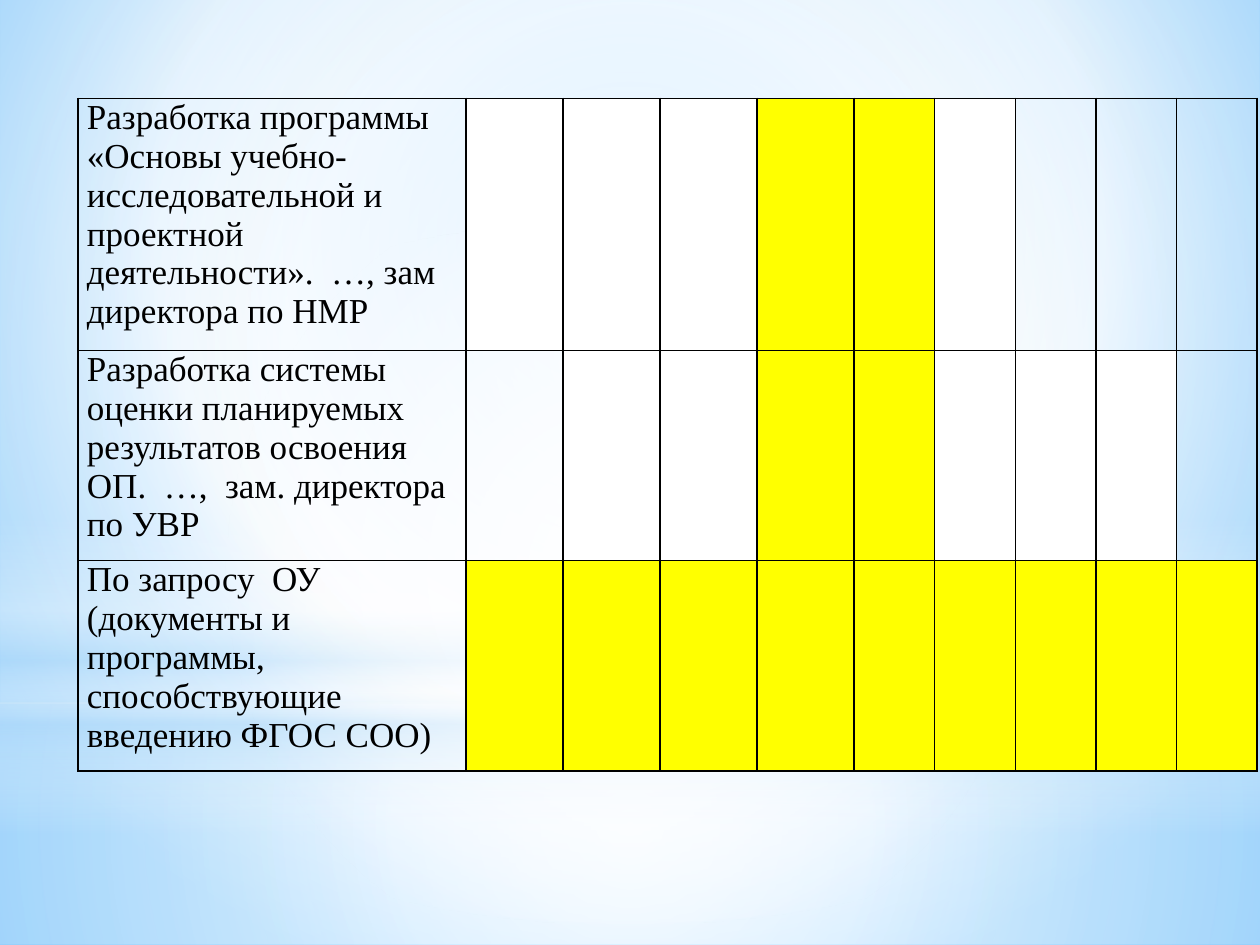
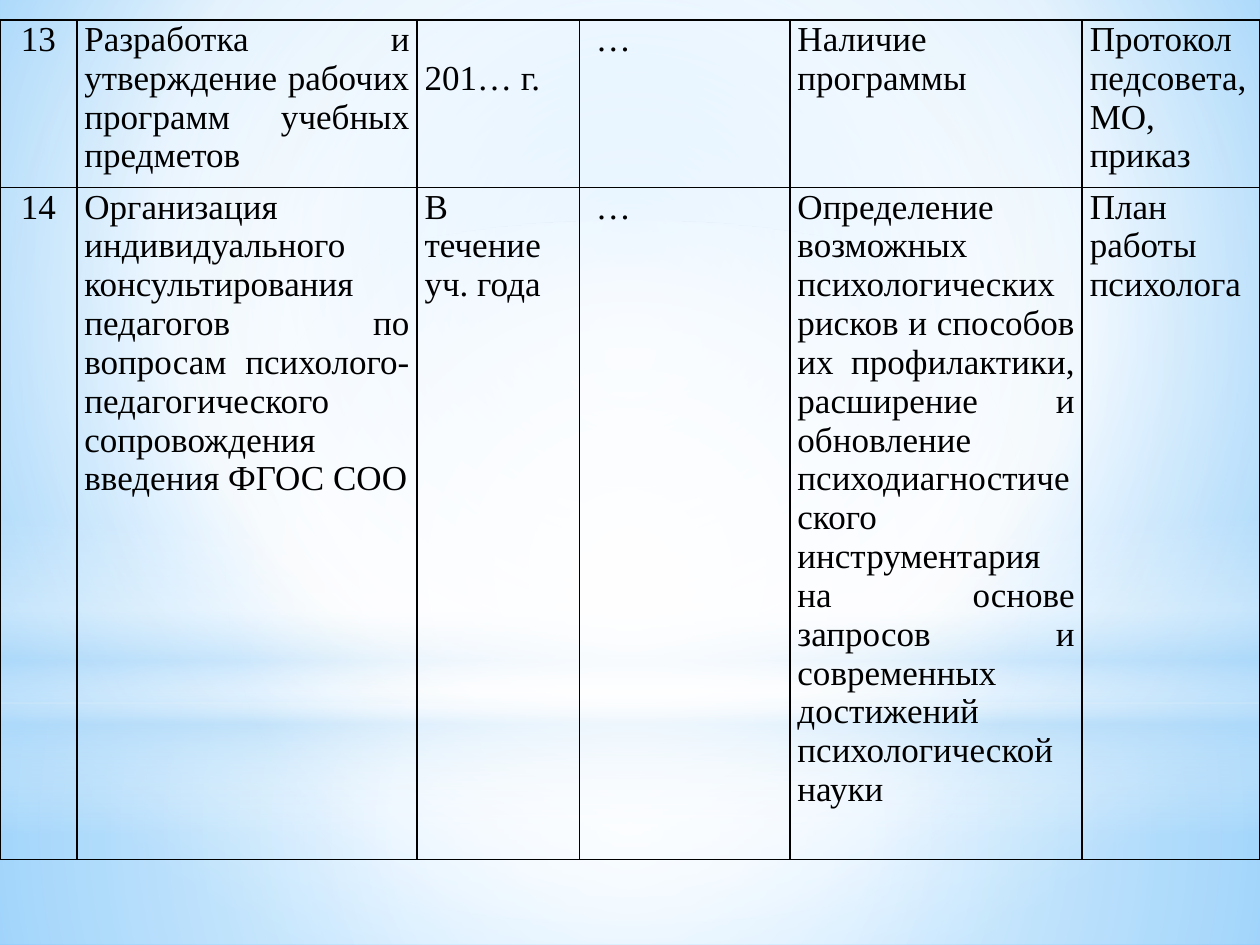
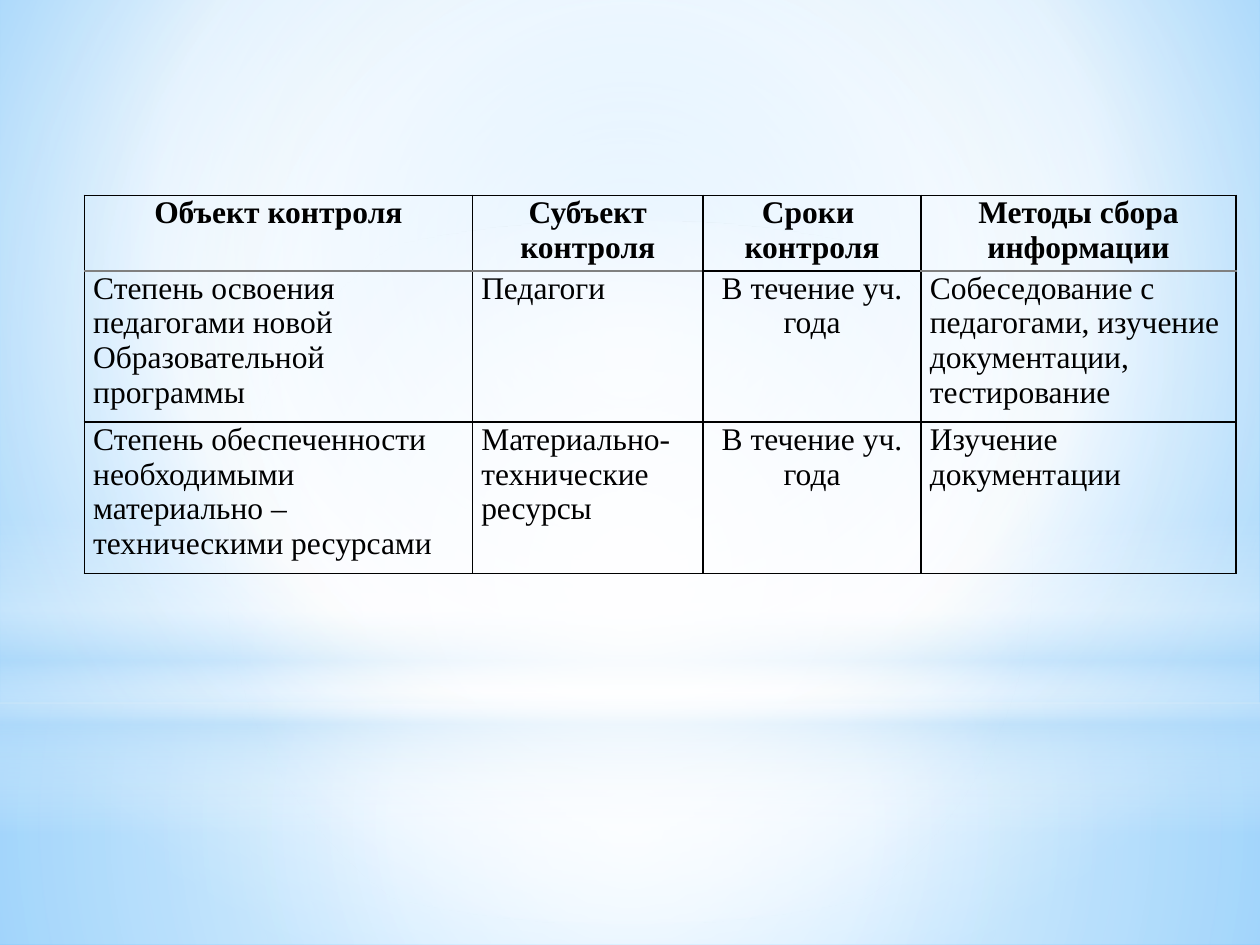
import pptx
import pptx.dml.color
import pptx.enum.shapes
import pptx.enum.text
import pptx.oxml
import pptx.oxml.ns
import pptx.util

INCH = pptx.util.Inches
WIDE, HIGH = 10, 7.5
FONT = "Times New Roman"
BLACK, GREY, WHITE, YELLOW, SKY = "000000", "808080", "FFFFFF", "FFFF00", "B4DCFA"
ALIGN = {
    "l": pptx.enum.text.PP_ALIGN.LEFT,
    "c": pptx.enum.text.PP_ALIGN.CENTER,
    "j": pptx.enum.text.PP_ALIGN.JUSTIFY,
}
FILLS = {"W": WHITE, "Y": YELLOW}


def color(code):
    return pptx.dml.color.RGBColor.from_string(code)


def blend(part, stops, focus):
    """Turn the solid fill of part into a gradient, circular round focus or, without one, vertical."""
    marks = "".join(
        f'<a:gs pos="{pos * 1000}"><a:srgbClr val="{code}">'
        f'<a:alpha val="{alpha * 1000}"/></a:srgbClr></a:gs>'
        for pos, code, alpha in stops)
    if focus:
        sides = " ".join(f'{side}="{share * 1000}"' for side, share in zip("ltrb", focus))
        course = f'<a:path path="circle"><a:fillToRect {sides}/></a:path>'
    else:
        course = '<a:lin ang="5400000" scaled="0"/>'
    old = part.find(".//" + pptx.oxml.ns.qn("a:solidFill"))
    old.getparent().replace(old, pptx.oxml.parse_xml(
        f'<a:gradFill {pptx.oxml.ns.nsdecls("a")} rotWithShape="1">'
        f'<a:gsLst>{marks}</a:gsLst>{course}</a:gradFill>'))


prs = pptx.Presentation()
prs.slide_width, prs.slide_height = INCH(WIDE), INCH(HIGH)
blank = prs.slide_layouts[6]
slides = [prs.slides.add_slide(blank) for _ in range(3)]

# Shared backdrop, kept on the master
master = prs.slide_master
master.background.fill.solid()
blend(master.element, [(0, "9ED5FF", 100), (60, WHITE, 100), (100, "5BB9FF", 100)],
      (20, 10, 20, 60))

RECT = pptx.enum.shapes.MSO_SHAPE.RECTANGLE
OVAL = pptx.enum.shapes.MSO_SHAPE.OVAL
MID = (50, 50, 50, 50)
SPLIT = 5.58
layers = [
    (RECT, SPLIT, HIGH - SPLIT, MID, [(0, WHITE, 91), (37, WHITE, 76), (100, SKY, 79)]),
    (RECT, 0, SPLIT, MID, [(0, WHITE, 89), (48, WHITE, 62), (100, SKY, 79)]),
    (RECT, 4.12, HIGH / 3, None, [(0, WHITE, 0), (29, WHITE, 30), (45, SKY, 40),
                                  (55, WHITE, 26), (65, SKY, 60), (100, WHITE, 0)]),
    (OVAL, 1.75, SPLIT, MID, [(0, WHITE, 100), (56, WHITE, 0)]),
]
for rank, (form, top, tall, focus, stops) in enumerate(layers):
    layer = slides[0].shapes.add_shape(form, 0, INCH(top), INCH(WIDE), INCH(tall))
    layer.shadow.inherit = False
    layer.line.fill.background()
    layer.fill.solid()
    blend(layer.element, stops, focus)
    layer.element.nvSpPr.cNvPr.set("id", str(100 + rank))
    master.shapes.element.insert(2 + rank, layer.element)

# Tables: aligns and fills hold one letter per column for each row
plan = {
    "at": (0.62, 0.78), "size": 20, "inset": 0.07,
    "cols": [3.08] + [0.77] * 4 + [0.64] * 5,
    "rows": [2, 1.67, 1.67],
    "aligns": ["l" * 10] * 3,
    "fills": ["-WWWYYW---", "--WWYYWWW-", "-YYYYYYYYY"],
    "cells": [
        ["Разработка программы «Основы учебно-исследовательной и проектной "
         "деятельности».  …, зам директора по НМР"],
        ["Разработка системы оценки планируемых результатов освоения "
         "ОП.  …,  зам. директора по УВР"],
        ["По запросу  ОУ (документы и программы, способствующие введению ФГОС СОО)"],
    ],
}
steps = {
    "at": (0, 0.16), "size": 20, "inset": 0.06,
    "cols": [0.61, 2.7, 1.29, 1.67, 2.32, 1.41],
    "rows": [1.33, 5.33],
    "aligns": ["cjjjjj"] * 2,
    "drop": {(0, 2): 0.31},
    "cells": [
        ["13", "Разработка и утверждение рабочих программ учебных предметов",
         "201… г.", " …", "Наличие программы", "Протокол педсовета, МО, приказ"],
        ["14", "Организация индивидуального консультирования педагогов по вопросам "
         "психолого-педагогического сопровождения введения ФГОС СОО",
         "В течение уч. года", " …",
         "Определение возможных психологических рисков и способов их профилактики, "
         "расширение и обновление психодиагностического инструментария на основе "
         "запросов и современных достижений психологической науки",
         "План работы психолога"],
    ],
}
checks = {
    "at": (0.67, 1.55), "size": 18, "inset": 0.07,
    "cols": [3.08, 1.83, 1.73, 2.5],
    "rows": [0.6, 1.2, 1.2],
    "aligns": ["cccc", "llcl", "llcl"],
    "head": True,
    "grey": [0, 1, 3],
    "cells": [
        ["Объект контроля", "Субъект контроля", "Сроки \nконтроля",
         "Методы сбора информации"],
        ["Степень освоения педагогами новой Образовательной программы", "Педагоги",
         "В течение уч. года",
         "Собеседование с педагогами, изучение документации, тестирование"],
        ["Степень обеспеченности необходимыми материально – техническими ресурсами",
         "Материально-технические ресурсы", "В течение уч. года",
         "Изучение документации"],
    ],
}

for slide, data in zip(slides, [plan, steps, checks]):
    cols, rows = data["cols"], data["rows"]
    left, top = data["at"]
    table = slide.shapes.add_table(len(rows), len(cols), INCH(left), INCH(top),
                                   INCH(sum(cols)), INCH(sum(rows))).table
    table.first_row = data.get("head", False)
    table.horz_banding = False
    for col, width in zip(table.columns, cols):
        col.width = INCH(width)
    for row, height in zip(table.rows, rows):
        row.height = INCH(height)

    for r in range(len(rows)):
        for c in range(len(cols)):
            cell = table.cell(r, c)
            cell.margin_left = cell.margin_right = INCH(data["inset"])
            cell.margin_top = INCH(data.get("drop", {}).get((r, c), 0))
            cell.margin_bottom = 0

            fill = FILLS.get(data["fills"][r][c]) if "fills" in data else None
            if fill:
                cell.fill.solid()
                cell.fill.fore_color.rgb = color(fill)
            else:
                cell.fill.background()

            # The rule under the heading row is grey in some columns
            soft = c in data.get("grey", [])
            for spot, side in enumerate("LRTB"):
                tint = GREY if soft and (r, side) in [(0, "B"), (1, "T")] else BLACK
                edge = pptx.oxml.parse_xml(
                    f'<a:ln{side} {pptx.oxml.ns.nsdecls("a")} w="12700"><a:solidFill>'
                    f'<a:srgbClr val="{tint}"/></a:solidFill></a:ln{side}>')
                cell._tc.get_or_add_tcPr().insert(spot, edge)

            if c >= len(data["cells"][r]):
                continue
            frame = cell.text_frame
            for n, line in enumerate(data["cells"][r][c].split("\n")):
                para = frame.add_paragraph() if n else frame.paragraphs[0]
                para.alignment = ALIGN[data["aligns"][r][c]]
                run = para.add_run()
                run.text = line
                run.font.name = FONT
                run.font.size = pptx.util.Pt(data["size"])
                run.font.bold = table.first_row and r == 0
                run.font.color.rgb = color(BLACK)

prs.save("out.pptx")
